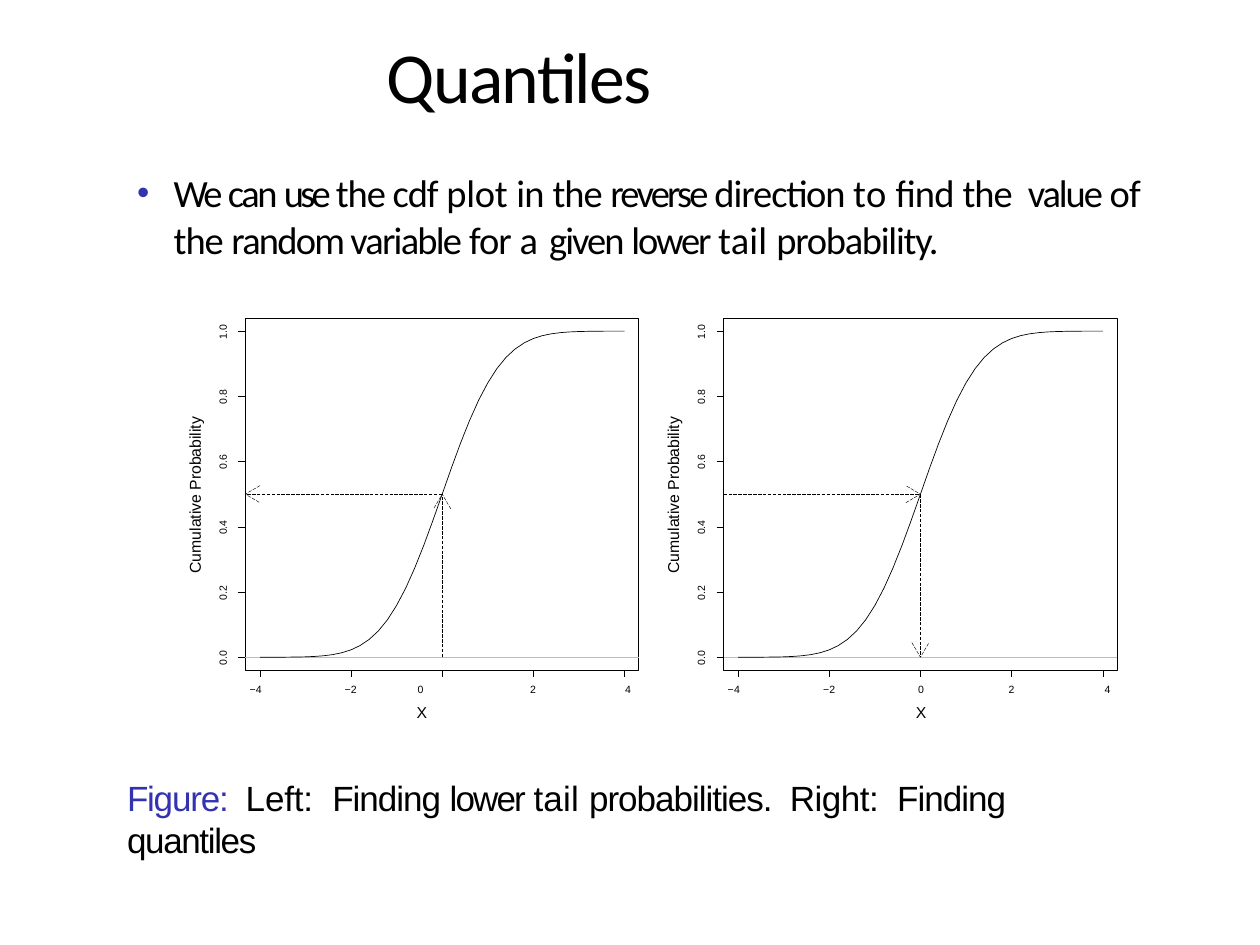
import math
import pptx
import pptx.dml.color
import pptx.enum.dml
import pptx.enum.shapes
import pptx.enum.text
import pptx.oxml
import pptx.oxml.ns
import pptx.util

Pt = pptx.util.Pt
ALIGN = pptx.enum.text.PP_ALIGN
BLACK, BLUE, GRAY = "000000", "3333B2", "BDBDBD"
NO_GRID_STYLE = "{2D5ABB26-0587-4C30-8999-92F81FD0307C}"

# Plot geometry, in points
PANEL_LEFTS = (140.2, 413.5)
PANEL_TOP, PANEL_WIDTH, PANEL_HEIGHT = 181.9, 224.8, 201.2
X_ORIGIN, X_UNIT = 112.5, 26.05      # place of x = 0 from the panel's left
Y_ZERO, Y_UNIT = 375.6, 186.4
TICK = 4

TITLE = [("Quantiles", -1)]
BODY = [("We ", -1.8), ("can ", -1.4), ("use ", -2.1), ("the cdf ", -0.6),
        ("plot ", -0.1), ("in ", -0.4), ("the ", -0.6), ("reverse ", -1.6),
        ("direction ", -0.6), ("to ", 0.2), ("find ", -0.4), ("the  ", -0.6),
        ("value ", -1.2), ("of ", -0.4), ("the ", -0.6),
        ("random variable ", -1), ("for ", -0.5), ("a  ", -1.8),
        ("given ", -1.1), ("lower ", -1.2), ("tail ", 0.1),
        ("probability.", -0.7)]
CAPTION = [("Figure:  ", -0.7, BLUE), ("Left:  ", -0.1), ("Finding ", -0.6),
           ("lower ", -1.1), ("tail ", 0.1), ("probabilities.  ", -0.6),
           ("Right:  ", -0.3), ("Finding ", -0.6), ("quantiles", -0.8)]
Y_TITLE = [("Cu", 0), ("m", -0.1), ("ulati", 0), ("v", -0.3),
           ("e Probability", 0)]

# Axis label table: text, alignment and left indent for each column
COLUMN_WIDTHS = (33, 52.5, 52.5, 51, 57.5, 60, 52.5, 52.5, 51, 31)
X_LABELS = [("−4", ALIGN.LEFT, 1.5), ("−2", ALIGN.CENTER, 0),
            ("0", ALIGN.LEFT, 12), ("2", ALIGN.CENTER, 0),
            ("4", ALIGN.CENTER, 0), ("−4", ALIGN.CENTER, 3.5),
            ("−2", ALIGN.CENTER, 0), ("0", ALIGN.CENTER, 0),
            ("2", ALIGN.CENTER, 0), ("4", ALIGN.RIGHT, 0)]
X_TITLES = {2: (ALIGN.LEFT, 11.5), 7: (ALIGN.CENTER, 0)}


def color(value):
    return pptx.dml.color.RGBColor.from_string(value)


def apply(target, values):
    for name, value in values.items():
        setattr(target, name, value)


def write(para, pieces, size, font, indent=0, hanging=0, **values):
    """Fill a paragraph with (text, letter spacing[, colour]) pieces."""
    apply(para, values)
    properties = para._p.get_or_add_pPr()
    properties.set("marL", str(Pt(indent)))
    properties.set("indent", str(Pt(hanging)))
    for text, spacing, *tint in pieces:
        span = para.add_run()
        span.text = text
        apply(span.font, {"size": Pt(size), "name": font})
        span.font.color.rgb = color(tint[0] if tint else BLACK)
        span._r.get_or_add_rPr().set("spc", str(round(spacing * 100)))


def format_frame(frame, top=0, **values):
    apply(frame, {"margin_left": 0, "margin_right": 0, "margin_bottom": 0,
                  "margin_top": Pt(top), "word_wrap": True, **values})


def text_box(page, place, pieces, size, font, top=0, vertical=False, **values):
    box = page.shapes.add_textbox(*map(Pt, place))
    format_frame(box.text_frame, top,
                 auto_size=pptx.enum.text.MSO_AUTO_SIZE.SHAPE_TO_FIT_TEXT)
    if vertical:
        box.text_frame._txBody.bodyPr.set("vert", "vert270")
    para = box.text_frame.paragraphs[0]
    write(para, pieces, size, font, **values)
    return para


def add_bullet(para):
    namespace = pptx.oxml.ns.nsdecls("a")
    for markup in (f'<a:buClr {namespace}><a:srgbClr val="{BLUE}"/></a:buClr>',
                   f'<a:buSzPct {namespace} val="91000"/>',
                   f'<a:buFont {namespace} typeface="Arial"/>',
                   f'<a:buChar {namespace} char="•"/>'):
        para._p.get_or_add_pPr().append(pptx.oxml.parse_xml(markup))


def style_line(shape, tint=BLACK, width=0.25, dashed=False):
    shape.line.color.rgb = color(tint)
    shape.line.width = Pt(width)
    if dashed:
        shape.line.dash_style = pptx.enum.dml.MSO_LINE.LONG_DASH


def line(page, start, end, **style):
    connector = page.shapes.add_connector(
        pptx.enum.shapes.MSO_CONNECTOR.STRAIGHT, *map(Pt, (*start, *end)))
    style_line(connector, **style)
    connector._element.spPr.append(pptx.oxml.parse_xml(
        f'<a:effectLst {pptx.oxml.ns.nsdecls("a")}/>'))


def polyline(page, points, **style):
    points = [(Pt(x), Pt(y)) for x, y in points]
    builder = page.shapes.build_freeform(*points[0])
    builder.add_line_segments(points[1:], close=False)
    shape = builder.convert_to_shape()
    shape.shadow.inherit = False
    shape.fill.background()
    style_line(shape, **style)


def dashed_arrow(page, start, end):
    """Dashed shaft with an open head 8.4 long and 9.8 wide."""
    line(page, start, end, dashed=True)
    length = math.dist(start, end)
    along_x, along_y = ((b - a) / length for a, b in zip(start, end))
    head = [(end[0] - 8.4 * along_x - side * along_y,
             end[1] - 8.4 * along_y + side * along_x) for side in (4.9, -4.9)]
    polyline(page, [head[0], end, head[1]], dashed=True)


def plot_panel(page, left):
    def place(x, probability):
        return left + X_ORIGIN + x * X_UNIT, Y_ZERO - probability * Y_UNIT

    # Frame, zero line and distribution curve
    frame = page.shapes.add_shape(
        pptx.enum.shapes.MSO_SHAPE.RECTANGLE,
        *map(Pt, (left, PANEL_TOP, PANEL_WIDTH, PANEL_HEIGHT)))
    frame.shadow.inherit = False
    frame.fill.background()
    style_line(frame)
    line(page, (left, Y_ZERO), (left + PANEL_WIDTH, Y_ZERO), tint=GRAY)
    values = [step / 5 for step in range(-20, 21)]
    polyline(page, [place(x, (1 + math.erf(x / math.sqrt(2))) / 2)
                    for x in values], width=0.41)

    # Ticks and vertical axis labels
    bottom = PANEL_TOP + PANEL_HEIGHT
    for value in range(-4, 5, 2):
        x, _ = place(value, 0)
        line(page, (x, bottom), (x, bottom + TICK))
    for step in range(6):
        _, y = place(0, step / 5)
        line(page, (left - TICK, y), (left, y))
        text_box(page, (left - 16.6, y - 6.4, 7.2, 13),
                 [(f"{step / 5:.1f}", 0)], 6, "Arial", top=1.4, vertical=True,
                 indent=2, space_before=Pt(1.3))
    text_box(page, (left - 34.5, 234.7, 10.8, 95), Y_TITLE, 9, "Arial",
             top=0.7, vertical=True, indent=2, space_before=Pt(0.5))
    return place(0, 0), place(0, 0.5), (left, place(0, 0.5)[1])


def label_table(page):
    frame = page.shapes.add_table(2, len(COLUMN_WIDTHS),
                                  *map(Pt, (141.1, 381.6, 493.5, 42.5)))
    table = frame.table
    apply(table, {"first_row": False, "horz_banding": False})
    table._tbl.tblPr.find(
        pptx.oxml.ns.qn("a:tableStyleId")).text = NO_GRID_STYLE
    for column, width in zip(table.columns, COLUMN_WIDTHS):
        column.width = Pt(width)
    for row, height in zip(table.rows, (20, 22.5)):
        row.height = Pt(height)
    for cell in table.iter_cells():
        apply(cell, {"margin_left": 0, "margin_right": 0,
                     "margin_top": 0, "margin_bottom": 0})
        cell.fill.background()
    for index, (text, alignment, indent) in enumerate(X_LABELS):
        cell = table.cell(0, index)
        cell.margin_top = Pt(9.3)
        write(cell.text_frame.paragraphs[0], [(text, 0.1 * (len(text) > 1))],
              6, "Arial", indent=indent, alignment=alignment)
    for index, (alignment, indent) in X_TITLES.items():
        cell = table.cell(1, index)
        cell.margin_top = Pt(1)
        write(cell.text_frame.paragraphs[0], [("X", 0)], 9, "Arial",
              indent=indent, alignment=alignment)


def main():
    deck = pptx.Presentation()
    apply(deck, {"slide_width": Pt(720), "slide_height": Pt(540)})
    page = deck.slides.add_slide(deck.slide_layouts[5])

    # Title and bullet
    title = page.shapes.title
    apply(title, {"left": Pt(36), "top": Pt(18),
                  "width": Pt(648), "height": Pt(49.7)})
    format_frame(title.text_frame,
                 vertical_anchor=pptx.enum.text.MSO_ANCHOR.MIDDLE)
    write(title.text_frame.paragraphs[0], TITLE, 41, "Calibri",
          indent=185, alignment=ALIGN.LEFT)
    add_bullet(text_box(page, (77, 95.8, 581, 54.7), BODY, 22, "Calibri",
                        indent=22.3, hanging=-20.9, line_spacing=1.03))

    # Left panel reads a probability, right panel reads a quantile
    base, middle, side = plot_panel(page, PANEL_LEFTS[0])
    dashed_arrow(page, base, middle)
    dashed_arrow(page, middle, side)
    base, middle, side = plot_panel(page, PANEL_LEFTS[1])
    dashed_arrow(page, side, middle)
    dashed_arrow(page, middle, base)
    label_table(page)

    # Caption
    text_box(page, (70.6, 443.5, 579, 24.5), CAPTION, 20, "Arial", indent=2)
    deck.save("out.pptx")


if __name__ == "__main__":
    main()
